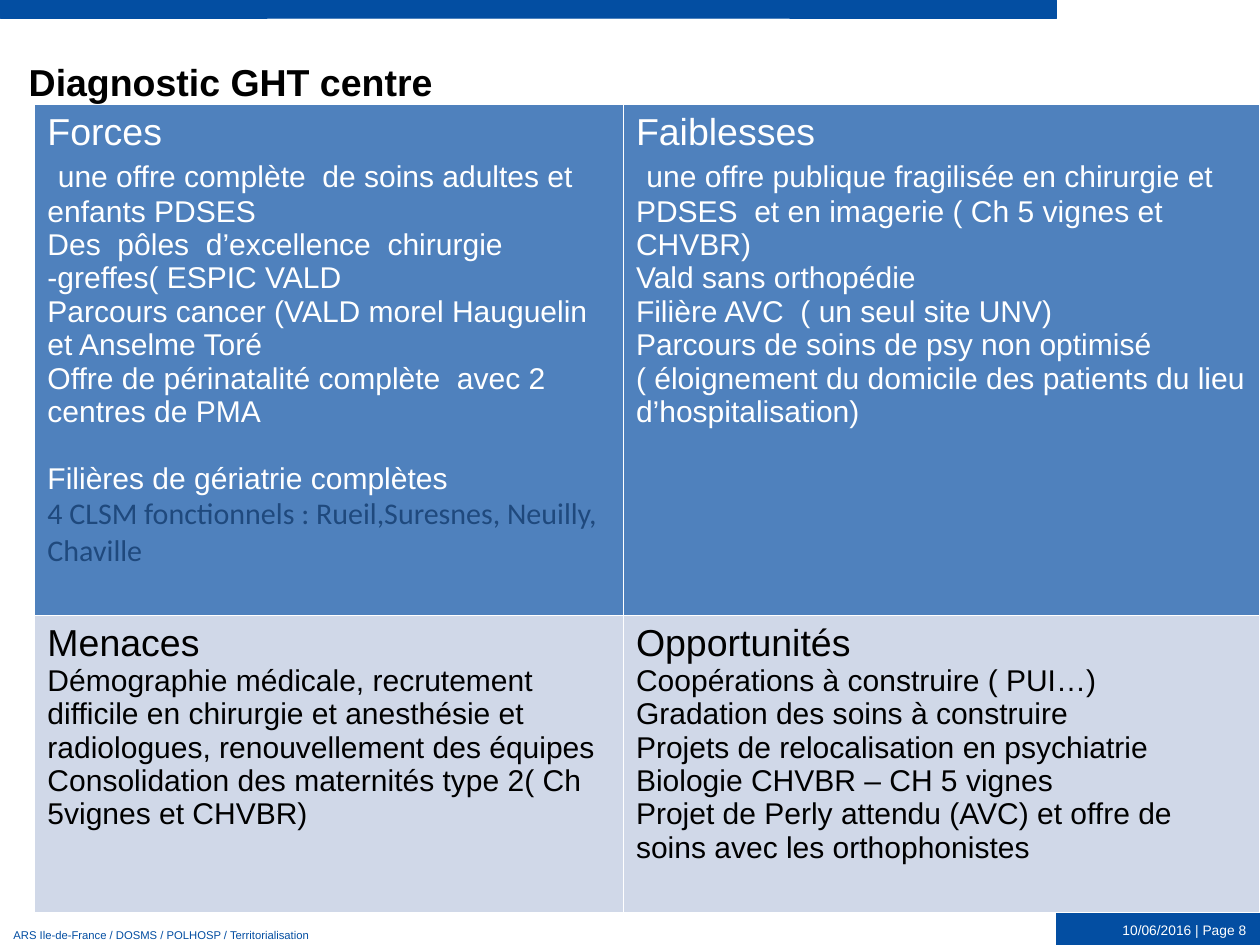
from lxml import etree
from pptx import Presentation
from pptx.dml.color import RGBColor
from pptx.enum.shapes import MSO_SHAPE
from pptx.enum.text import MSO_ANCHOR, MSO_AUTO_SIZE, PP_ALIGN
from pptx.oxml.ns import qn
from pptx.util import Cm, Pt

NAVY = RGBColor(0x03, 0x4E, 0xA2)
BLUE = RGBColor(0x4F, 0x81, 0xBD)
PALE = RGBColor(0xD0, 0xD8, 0xE8)
DARK = RGBColor(0x1F, 0x49, 0x7D)
WHITE = RGBColor(0xFF, 0xFF, 0xFF)
BLACK = RGBColor(0x00, 0x00, 0x00)

FORCES = [
    "une offre complète  de soins adultes et enfants PDSES",
    "Des  pôles  d’excellence  chirurgie -greffes( ESPIC VALD",
    "Parcours cancer (VALD morel Hauguelin et Anselme Toré",
    "Offre de périnatalité complète  avec 2 centres de PMA",
    "Filières de gériatrie complètes",
    "4 CLSM fonctionnels : Rueil,Suresnes, Neuilly, Chaville",
]
FAIBLESSES = [
    "une offre publique fragilisée en chirurgie et PDSES  et en imagerie ( Ch 5 vignes et CHVBR)",
    "Vald sans orthopédie",
    "Filière AVC  ( un seul site UNV)",
    "Parcours de soins de psy non optimisé ( éloignement du domicile des patients du lieu d’hospitalisation)",
]
MENACES = [
    "Démographie médicale, recrutement difficile en chirurgie et anesthésie et radiologues, "
    "renouvellement des équipes",
    "Consolidation des maternités type 2( Ch 5vignes et CHVBR)",
]
OPPORTUNITES = [
    "Coopérations à construire ( PUI…)",
    "Gradation des soins à construire",
    "Projets de relocalisation en psychiatrie",
    "Biologie CHVBR – CH 5 vignes",
    "Projet de Perly attendu (AVC) et offre de soins avec les orthophonistes",
]
SWOT = [
    [("Forces", FORCES), ("Faiblesses", FAIBLESSES)],
    [("Menaces", MENACES), ("Opportunités", OPPORTUNITES)],
]


def style(p, size, color, bold=False, name="Arial"):
    """Set the font of a paragraph."""
    font = p.font
    font.name, font.size, font.bold = name, Pt(size), bold
    font.color.rgb = color


def set_frame(tf, text, size, color, bold=False, align=PP_ALIGN.LEFT):
    """Fill a bottom-anchored text frame with one paragraph."""
    tf.auto_size = MSO_AUTO_SIZE.NONE
    tf.word_wrap = True
    tf.vertical_anchor = MSO_ANCHOR.BOTTOM
    tf.margin_left = tf.margin_right = Cm(0.38)
    tf.margin_top = tf.margin_bottom = Cm(0.2)
    p = tf.paragraphs[0]
    p.text, p.alignment = text, align
    style(p, size, color, bold)


def add_bar(s, left, top, width, height):
    """Add a navy rectangle."""
    sp = s.shapes.add_shape(MSO_SHAPE.RECTANGLE, left, top, width, height)
    sp.shadow.inherit = False
    sp.fill.solid()
    sp.fill.fore_color.rgb = NAVY
    sp.line.color.rgb = NAVY
    sp.line.width = Pt(0.25)
    return sp


def add_header(s, left, top, width):
    """Place the top bar and the slide title."""
    add_bar(s, left, top, width, Cm(0.51))
    title = s.shapes.title
    title.left, title.top = left + Cm(0.43), top + Cm(0.58)
    title.width, title.height = width - Cm(0.43), Cm(2.57)
    set_frame(title.text_frame, "Diagnostic GHT centre", 30, BLACK, bold=True)


def add_footer(s, left, top, width, height):
    """Place the department line and the page block."""
    page_width, line_height = Cm(5.74), Cm(0.51)
    text_width = width - page_width
    box = s.shapes.add_textbox(left, top + height - line_height + Cm(0.1), text_width, line_height)
    set_frame(box.text_frame, "ARS Ile-de-France / DOSMS / POLHOSP / Territorialisation", 9, NAVY)
    page = add_bar(s, left + text_width, top, page_width, height)
    set_frame(page.text_frame, "10/06/2016 | Page 8", 11, WHITE, align=PP_ALIGN.RIGHT)


def set_borders(cell, color, width):
    """Draw a solid line on every side of a cell."""
    tc_pr = cell._tc.get_or_add_tcPr()
    for i, side in enumerate(("lnL", "lnR", "lnT", "lnB")):
        ln = etree.Element(qn(f"a:{side}"), w=str(width))
        fill = etree.SubElement(ln, qn("a:solidFill"))
        etree.SubElement(fill, qn("a:srgbClr"), val=str(color))
        tc_pr.insert(i, ln)


def fill_cell(cell, heading, lines, fill, color, lead):
    """Write a heading and its lines, with an optional wide lead space."""
    cell.fill.solid()
    cell.fill.fore_color.rgb = fill
    cell.margin_left = cell.margin_right = Cm(0.36)
    cell.margin_top = cell.margin_bottom = Cm(0.2)
    set_borders(cell, WHITE, Pt(1))
    tf = cell.text_frame
    tf.paragraphs[0].text = heading
    style(tf.paragraphs[0], 30, color)
    for i, line in enumerate(lines):
        p = tf.add_paragraph()
        style(p, 24, color)
        if lead and i == 0:
            r = p.add_run()
            r.text, r.font.size = " ", Pt(30)
        p.add_run().text = line


def add_swot(s, left, top, width, height):
    """Place the two-by-two analysis table."""
    table = s.shapes.add_table(2, 2, left, top, width, height).table
    table.columns[0].width = Cm(16.61)
    table.columns[1].width = width - Cm(16.61)
    table.rows[0].height = Cm(14.42)
    table.rows[1].height = height - Cm(14.42)
    looks = [(BLUE, WHITE, True), (PALE, BLACK, False)]
    for r, (row, look) in enumerate(zip(SWOT, looks)):
        for c, (heading, lines) in enumerate(row):
            fill_cell(table.cell(r, c), heading, lines, *look)
    geriatrics, councils = table.cell(0, 0).text_frame.paragraphs[-2:]
    geriatrics.space_before = Pt(26.8)
    style(councils, 24, DARK, name="Calibri")


def main():
    """Build and save the slide."""
    prs = Presentation()
    prs.slide_width, prs.slide_height = Cm(35.56), Cm(26.67)
    s = prs.slides.add_slide(prs.slide_layouts[5])
    add_header(s, 0, 0, Cm(29.82))
    add_footer(s, 0, Cm(25.7), prs.slide_width, Cm(0.97))
    add_swot(s, Cm(0.98), Cm(2.94), prs.slide_width - Cm(0.98), Cm(22.8))
    prs.save("out.pptx")


if __name__ == "__main__":
    main()
